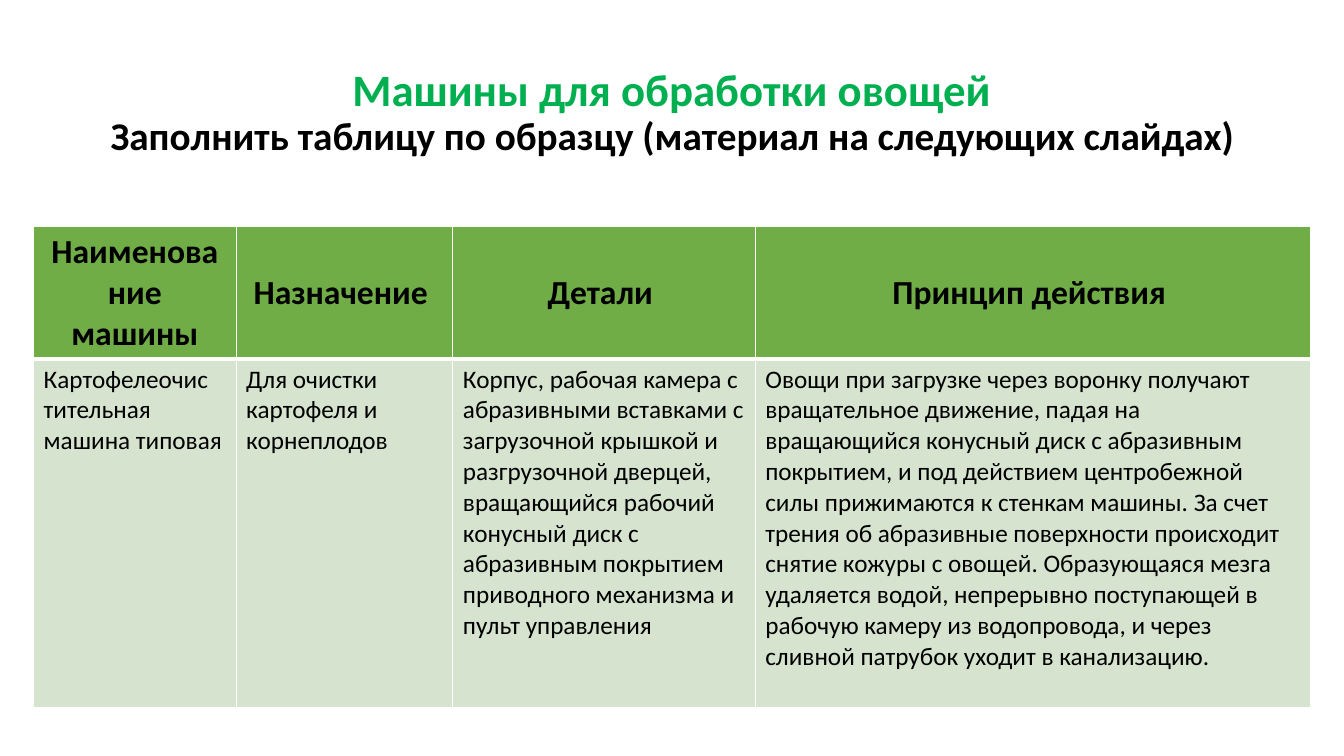
from copy import deepcopy

from lxml.etree import SubElement
from pptx import Presentation
from pptx.dml.color import RGBColor
from pptx.enum.text import MSO_ANCHOR as Anchor, MSO_AUTO_SIZE as AutoSize, PP_ALIGN as Align
from pptx.oxml.ns import qn
from pptx.util import Pt

GREEN = RGBColor(0x00, 0xB0, 0x50)
HEADER_FILL = RGBColor(0x70, 0xAD, 0x47)
BODY_FILL = RGBColor(0xD5, 0xE3, 0xCF)
BLACK = RGBColor(0, 0, 0)
WHITE = RGBColor(0xFF, 0xFF, 0xFF)

TITLE_BOX = (66, 28.8, 828, 104.4)
TABLE_BOX = (24, 161.5, 912.2, 343)
COLUMN_WIDTHS = (144.7, 154.8, 216, 396.7)
ROW_HEIGHTS = (94, 249)

HEADERS = ("Наименование машины", "Назначение ", "Детали ", "Принцип действия ")
MACHINE = (
    "Картофелеочис\nтительная машина типовая",
    "Для очистки картофеля и корнеплодов",
    "Корпус, рабочая камера с абразивными вставками с загрузочной крышкой и "
    "разгрузочной дверцей, вращающийся рабочий конусный диск с абразивным "
    "покрытием приводного механизма и пульт управления",
    "Овощи при загрузке через воронку получают вращательное движение, падая на "
    "вращающийся конусный диск с абразивным покрытием, и под действием "
    "центробежной силы прижимаются к стенкам машины. За счет трения об "
    "абразивные поверхности происходит снятие кожуры с овощей. Образующаяся "
    "мезга удаляется водой, непрерывно поступающей в рабочую камеру из "
    "водопровода, и через сливной патрубок уходит в канализацию.",
)


def add_text(p, text, size=18, color=BLACK, bold=False, align=Align.LEFT):
    p.alignment = align
    r = p.add_run()
    r.text = text
    f = r.font
    f.name, f.size, f.bold = "Calibri", Pt(size), bold
    f.color.rgb = color
    return r


def set_borders(cell, **widths):
    """Draw white cell edges; widths maps L, R, T and B to points."""
    props = cell._tc.get_or_add_tcPr()
    for i, (side, width) in enumerate(widths.items()):
        line = props.makeelement(qn(f"a:ln{side}"), {"w": str(Pt(width))})
        fill = SubElement(line, qn("a:solidFill"))
        SubElement(fill, qn("a:srgbClr"), val=str(WHITE))
        props.insert(i, line)


def add_title(slide, box):
    sp = slide.shapes.title
    sp.left, sp.top, sp.width, sp.height = map(Pt, box)
    tf = sp.text_frame
    tf.word_wrap = True
    tf.auto_size = AutoSize.NONE
    tf.vertical_anchor = Anchor.MIDDLE
    p = tf.paragraphs[0]
    p.line_spacing = 0.9
    r = add_text(p, "Машины для обработки овощей", size=32, color=GREEN,
                 bold=True, align=Align.CENTER)
    p.add_line_break()
    # The break takes the heading's size so that it does not stretch the line
    p._p[-1].append(deepcopy(r._r.rPr))
    add_text(p, "Заполнить таблицу по образцу (материал на следующих слайдах)",
             size=28, bold=True, align=Align.CENTER)


def fill_row(cells, texts, fill, anchor, borders, **fmt):
    for cell, text in zip(cells, texts):
        cell.fill.solid()
        cell.fill.fore_color.rgb = fill
        cell.vertical_anchor = anchor
        set_borders(cell, **borders)
        tf = cell.text_frame
        for i, line in enumerate(text.split("\n")):
            add_text(tf.add_paragraph() if i else tf.paragraphs[0], line, **fmt)


def add_machine_table(slide, box):
    table = slide.shapes.add_table(2, len(HEADERS), *map(Pt, box)).table
    for column, width in zip(table.columns, COLUMN_WIDTHS):
        column.width = Pt(width)
    for row, height in zip(table.rows, ROW_HEIGHTS):
        row.height = Pt(height)
    header, body = table.rows
    fill_row(header.cells, HEADERS, HEADER_FILL, Anchor.MIDDLE,
             dict(L=1, R=1, T=1, B=3), size=24, bold=True, align=Align.CENTER)
    fill_row(body.cells, MACHINE, BODY_FILL, Anchor.TOP,
             dict(L=1, R=1, T=3, B=1))


def main():
    prs = Presentation()
    prs.slide_width, prs.slide_height = Pt(960), Pt(540)
    slide = prs.slides.add_slide(prs.slide_layouts[5])
    add_title(slide, TITLE_BOX)
    add_machine_table(slide, TABLE_BOX)
    prs.save("out.pptx")


if __name__ == "__main__":
    main()
